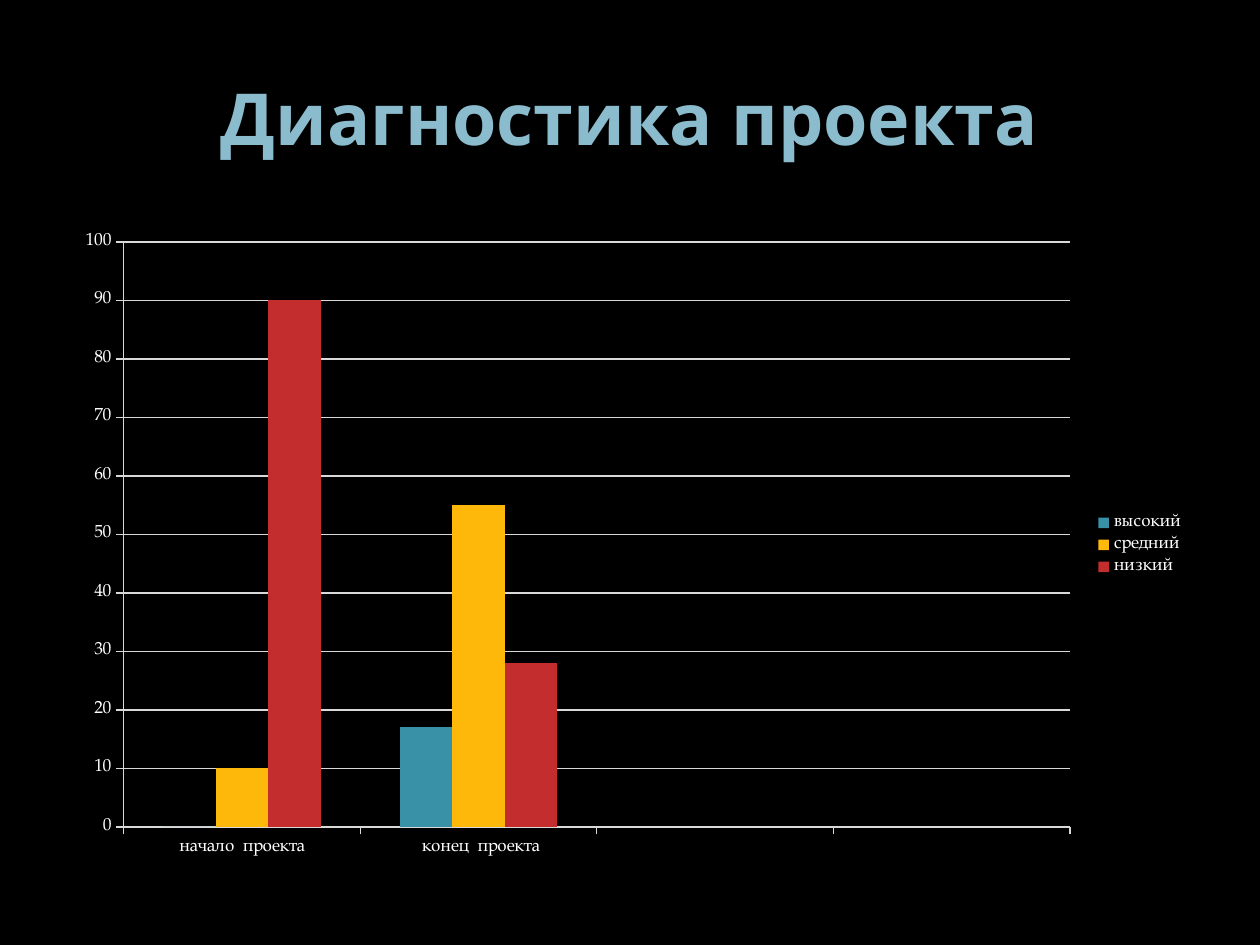
"""Build the project diagnostics slide with a clustered column chart."""
from pptx import Presentation
from pptx.chart.data import CategoryChartData
from pptx.dml.color import RGBColor
from pptx.enum.chart import XL_CHART_TYPE, XL_LEGEND_POSITION, XL_TICK_MARK
from pptx.enum.text import MSO_ANCHOR, PP_ALIGN
from pptx.util import Inches, Pt

CLUSTERED = XL_CHART_TYPE.COLUMN_CLUSTERED
LEGEND_RIGHT = XL_LEGEND_POSITION.RIGHT
TICK_OUTSIDE = XL_TICK_MARK.OUTSIDE
MIDDLE = MSO_ANCHOR.MIDDLE
CENTER = PP_ALIGN.CENTER

COLORS = {
    "background": "000000",
    "title": "8BBCCE",
    "text": "FFFFFF",
    "line": "D9D9D9",
    "высокий": "3891A7",
    "средний": "FEB80A",
    "низкий": "C32D2E",
}
LEVELS = {
    "высокий": (0, 17, None, None),
    "средний": (10, 55, None, None),
    "низкий": (90, 28, None, None),
}


def format_font(font, name, size, color, bold=False):
    font.name = name
    font.size = Pt(size)
    font.bold = bold
    font.color.rgb = RGBColor.from_string(COLORS[color])


presentation = Presentation()
presentation.slide_width = Inches(10)
presentation.slide_height = Inches(7.5)
margin = Inches(0.5)
content_width = presentation.slide_width - 2 * margin

slide = presentation.slides.add_slide(presentation.slide_layouts[5])
slide.background.fill.solid()
slide.background.fill.fore_color.rgb = RGBColor.from_string(COLORS["background"])

title = slide.shapes.title
title.left, title.top = margin, Inches(0.3)
title.width, title.height = content_width, Inches(1.25)
title.text_frame.text = "Диагностика проекта"
title.text_frame.vertical_anchor = MIDDLE
paragraph = title.text_frame.paragraphs[0]
paragraph.alignment = CENTER
format_font(paragraph.runs[0].font, "Open Sans", 41, "title", bold=True)

chart_data = CategoryChartData()
chart_data.categories = ["начало  проекта", " конец  проекта", "", ""]
for level, values in LEVELS.items():
    chart_data.add_series(level, values)

chart = slide.shapes.add_chart(
    CLUSTERED, margin, Inches(1.75), content_width, Inches(5.15), chart_data
).chart
format_font(chart.font, "TeX Gyre Pagella", 10, "text")
chart.has_title = False
chart.has_legend = True
chart.legend.position = LEGEND_RIGHT
chart.legend.include_in_layout = False

plot = chart.plots[0]
plot.gap_width = 150
plot.overlap = 0
plot.vary_by_categories = False
for series in plot.series:
    series.invert_if_negative = False
    series.format.fill.solid()
    series.format.fill.fore_color.rgb = RGBColor.from_string(COLORS[series.name])

value_axis = chart.value_axis
value_axis.minimum_scale = 0
value_axis.maximum_scale = 100
value_axis.major_unit = 10
value_axis.has_major_gridlines = True
for axis in (chart.category_axis, value_axis):
    axis.major_tick_mark = TICK_OUTSIDE
for element in (chart.category_axis, value_axis, value_axis.major_gridlines):
    element.format.line.width = Pt(0.75)
    element.format.line.color.rgb = RGBColor.from_string(COLORS["line"])

presentation.save("out.pptx")
